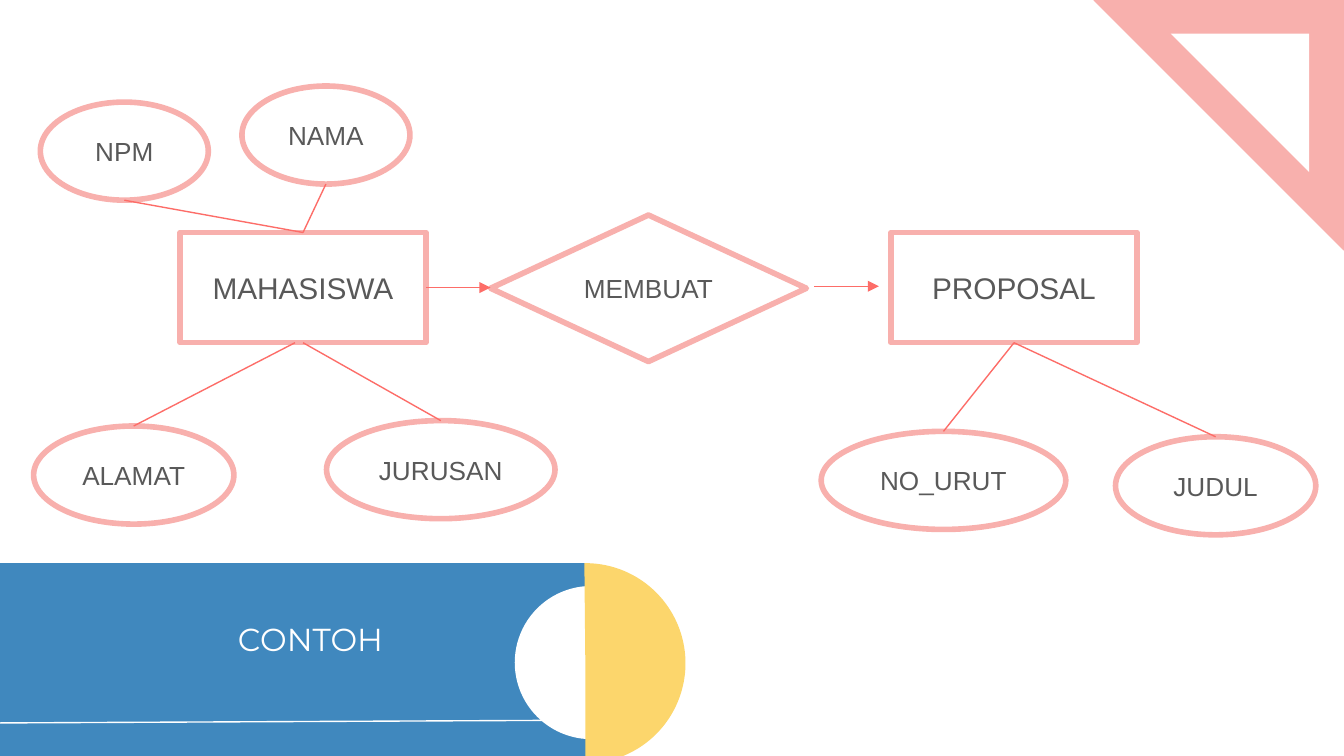
"""Build the CONTOH slide with an entity-relationship diagram."""
from lxml import etree
from pptx import Presentation
from pptx import util as u
from pptx.dml import color as c
from pptx.enum import shapes, text
from pptx.oxml import ns

COLORS = {"blue": "4088BE", "pink": "F8B0AD", "yellow": "FCD66C",
          "white": "FFFFFF", "red": "FD6D68", "gray": "595959"}
KINDS = shapes.MSO_SHAPE


def add_shape(kind, box, fill=None, line=None, width=0.75):
    shape = slide.shapes.add_shape(kind, *map(u.Inches, box))
    shape.shadow.inherit = False
    if fill:
        shape.fill.solid()
        shape.fill.fore_color.rgb = c.RGBColor.from_string(COLORS[fill])
    else:
        shape.fill.background()
    if line:
        shape.line.color.rgb = c.RGBColor.from_string(COLORS[line])
        shape.line.width = u.Pt(width)
        etree.SubElement(shape.line._get_or_add_ln(), ns.qn("a:round"))
    else:
        shape.line.fill.background()
    return shape


def add_line(start, end, color, arrow=False):
    connector = slide.shapes.add_connector(
        shapes.MSO_CONNECTOR.STRAIGHT, *map(u.Inches, (*start, *end)))
    connector.line.color.rgb = c.RGBColor.from_string(COLORS[color])
    connector.line.width = u.Pt(0.75)
    if arrow:
        etree.SubElement(connector.line._get_or_add_ln(), ns.qn("a:tailEnd"), type="triangle")
    etree.SubElement(connector._element.spPr, ns.qn("a:effectLst"))


presentation = Presentation()
presentation.slide_width = u.Inches(10)
presentation.slide_height = u.Inches(10 * 9 / 16)
slide = presentation.slides.add_slide(presentation.slide_layouts[5])

band = add_shape(KINDS.ROUNDED_RECTANGLE, (-0.11, 4.19, 4.49, 1.49), "blue")
band.adjustments[0] = 0
corner = add_shape(KINDS.RIGHT_TRIANGLE, (8.14, 0, 1.86, 1.86), "pink", "pink")
corner_hole = add_shape(KINDS.RIGHT_TRIANGLE, (8.71, 0.25, 1.03, 1.03), "white")
disc_hole = add_shape(KINDS.OVAL, (3.83, 4.36, 1.14, 1.14), "white")
half_disc = add_shape(KINDS.PIE, (3.61, 4.19, 1.49, 1.49), "yellow")
half_disc.adjustments[0] = 53.67
half_disc.adjustments[1] = 162
for shape in (corner, corner_hole, disc_hole, half_disc):
    shape.rotation = 180
add_line((-0.15, 5.38), (4.12, 5.36), "white")

title = slide.shapes.title
title.left, title.top, title.width, title.height = map(u.Inches, (0.79, 4.41, 3.04, 0.69))
slide.shapes._spTree.append(title._element)
frame = title.text_frame
frame.margin_left = frame.margin_right = frame.margin_top = frame.margin_bottom = 0
frame.vertical_anchor = text.MSO_ANCHOR.MIDDLE
frame.paragraphs[0].alignment = text.PP_ALIGN.CENTER
run = frame.paragraphs[0].add_run()
run.text = "CONTOH"
run.font.name = "Montserrat"
run.font.size = u.Pt(17)
run.font.color.rgb = c.RGBColor.from_string(COLORS["white"])

nodes = {
    "MAHASISWA": (KINDS.RECTANGLE, 16, (1.34, 1.73, 1.83, 0.82)),
    "MEMBUAT": (KINDS.FLOWCHART_DECISION, 14, (3.65, 1.6, 2.35, 1.09)),
    "PROPOSAL": (KINDS.RECTANGLE, 16, (6.63, 1.73, 1.83, 0.82)),
    "NPM": (KINDS.OVAL, 14, (0.3, 0.76, 1.25, 0.73)),
    "NAMA": (KINDS.OVAL, 14, (1.8, 0.64, 1.25, 0.73)),
    "ALAMAT": (KINDS.OVAL, 14, (0.25, 3.17, 1.49, 0.73)),
    "JURUSAN": (KINDS.OVAL, 14, (2.43, 3.13, 1.7, 0.73)),
    "NO_URUT": (KINDS.OVAL, 14, (6.11, 3.21, 1.82, 0.73)),
    "JUDUL": (KINDS.OVAL, 14, (8.3, 3.25, 1.49, 0.73)),
}
for label, (kind, size, box) in nodes.items():
    frame = add_shape(kind, box, line="pink", width=3).text_frame
    frame.word_wrap = False
    frame.vertical_anchor = text.MSO_ANCHOR.MIDDLE
    paragraph = frame.paragraphs[0]
    paragraph.alignment = text.PP_ALIGN.CENTER
    run = paragraph.add_run()
    run.text = label
    run.font.name = "Arial"
    run.font.size = u.Pt(size)
    run.font.color.rgb = c.RGBColor.from_string(COLORS["gray"])

add_line((3.17, 2.14), (3.65, 2.14), "red", arrow=True)
add_line((6.06, 2.13), (6.54, 2.13), "red", arrow=True)

links = [("NAMA", "MAHASISWA", 0), ("NPM", "MAHASISWA", 0),
         ("ALAMAT", "MAHASISWA", -0.06), ("JURUSAN", "MAHASISWA", 0),
         ("NO_URUT", "PROPOSAL", 0), ("JUDUL", "PROPOSAL", 0)]
for attribute, entity, shift in links:
    left, top, width, height = nodes[attribute][2]
    entity_left, entity_top, entity_width, entity_height = nodes[entity][2]
    above = top < entity_top
    start = (left + width / 2, top + height if above else top)
    end = (entity_left + entity_width / 2 + shift,
           entity_top if above else entity_top + entity_height)
    add_line(start, end, "red")

presentation.save("out.pptx")
